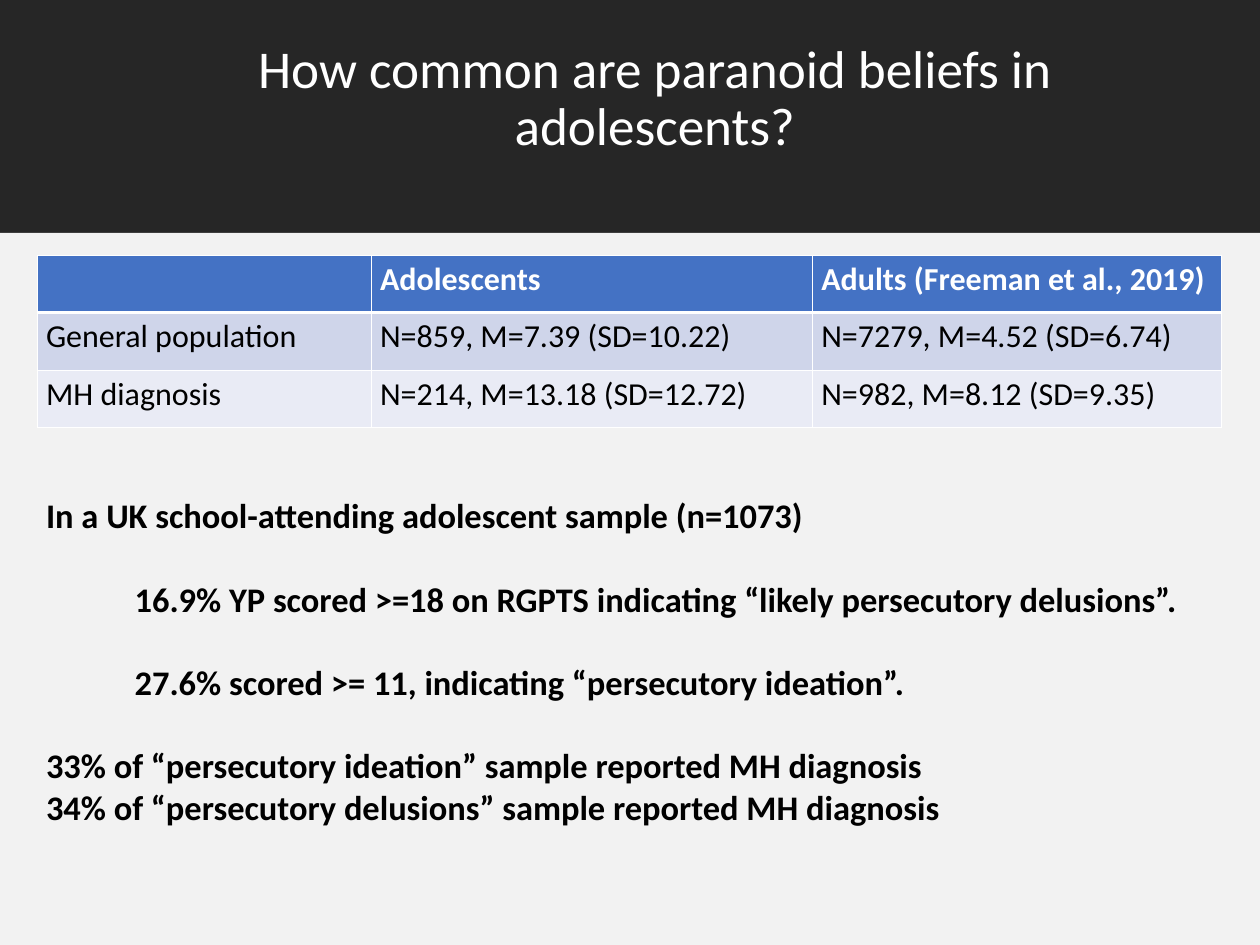
from dataclasses import dataclass

from lxml.etree import SubElement
from pptx import Presentation
from pptx.dml.color import RGBColor
from pptx.enum.shapes import MSO_SHAPE
from pptx.enum.text import MSO_ANCHOR, MSO_AUTO_SIZE, PP_ALIGN
from pptx.oxml.ns import qn
from pptx.util import Inches, Pt

COLOURS = {
    "banner": "262626",
    "panel": "F2F2F2",
    "white": "FFFFFF",
    "black": "000000",
    "header": "4472C4",
    "odd_row": "CFD5EA",
    "even_row": "E9EBF5",
}
FONT = "Calibri"
WIDTH, HEIGHT, BANNER_BOTTOM = 14.22, 10.67, 2.63
LEFT, CONTENT_WIDTH = 0.42, 13.37
LINE_GAP = 34.2


@dataclass
class Band:
    top: float
    height: float
    colour: str


@dataclass
class Finding:
    text: str
    indent: float = 0
    gap: float = LINE_GAP


@dataclass
class TableRow:
    cells: tuple[str, ...]
    fill: str
    colour: str = "black"
    bold: bool = False
    top_border: float = 1
    bottom_border: float = 1


BANDS = [
    Band(0, BANNER_BOTTOM, "banner"),
    Band(BANNER_BOTTOM, HEIGHT - BANNER_BOTTOM, "panel"),
]
FINDINGS = [
    Finding("In a UK school-attending adolescent sample (n=1073)", gap=0),
    Finding("16.9% YP scored >=18 on RGPTS indicating “likely persecutory delusions”.", indent=1),
    Finding("27.6% scored >= 11, indicating “persecutory ideation”.", indent=1),
    Finding("33% of “persecutory ideation” sample reported MH diagnosis"),
    Finding("34% of “persecutory delusions” sample reported MH diagnosis", gap=0),
]
COLUMN_WIDTHS = (3.77, 4.98, 4.62)
ROW_HEIGHT = 0.65
ROWS = [
    TableRow(("", "Adolescents", "Adults (Freeman et al., 2019)"),
             "header", "white", bold=True, bottom_border=3),
    TableRow(("General population", "N=859, M=7.39 (SD=10.22)", "N=7279, M=4.52 (SD=6.74)"),
             "odd_row", top_border=3),
    TableRow(("MH diagnosis", "N=214, M=13.18 (SD=12.72)", "N=982, M=8.12 (SD=9.35)"),
             "even_row"),
]


def colour(name: str) -> RGBColor:
    return RGBColor.from_string(COLOURS[name])


def set_font(paragraph, size: float, colour_name: str, bold: bool = False) -> None:
    font = paragraph.font
    font.name, font.size, font.bold = FONT, Pt(size), bold
    font.color.rgb = colour(colour_name)


def place(shape, left: float, top: float, width: float, height: float) -> None:
    shape.left, shape.top = Inches(left), Inches(top)
    shape.width, shape.height = Inches(width), Inches(height)


def add_band(slide, band: Band) -> None:
    """Draw a full-width band behind the title and body text."""
    shape = slide.shapes.add_shape(
        MSO_SHAPE.RECTANGLE, 0, Inches(band.top), Inches(WIDTH), Inches(band.height))
    shape.shadow.inherit = False
    shape.fill.solid()
    shape.fill.fore_color.rgb = colour(band.colour)
    shape.line.fill.background()
    slide.shapes.title.element.addprevious(shape.element)


def fill_title(title) -> None:
    place(title, 1.62, 0.43, 11.54, 1.4)
    frame = title.text_frame
    frame.text = "How common are paranoid beliefs in adolescents?"
    frame.auto_size = MSO_AUTO_SIZE.NONE
    frame.vertical_anchor = MSO_ANCHOR.MIDDLE
    paragraph = frame.paragraphs[0]
    paragraph.alignment = PP_ALIGN.CENTER
    paragraph.line_spacing = 0.9
    set_font(paragraph, 43.2, "white")


def fill_findings(body) -> None:
    place(body, LEFT, 5.53, CONTENT_WIDTH, 3.87)
    frame = body.text_frame
    frame.auto_size = MSO_AUTO_SIZE.NONE
    frame.vertical_anchor = MSO_ANCHOR.TOP
    frame.text = "\n".join(finding.text for finding in FINDINGS)
    for paragraph, finding in zip(frame.paragraphs, FINDINGS):
        properties = paragraph._p.get_or_add_pPr()
        properties.set("marL", str(Inches(finding.indent)))
        properties.set("indent", "0")
        SubElement(properties, qn("a:buNone"))
        paragraph.space_before = Pt(finding.gap)
        set_font(paragraph, 28, "black", bold=True)


def add_borders(cell, row: TableRow) -> None:
    properties = cell._tc.get_or_add_tcPr()
    widths = {"lnL": 1, "lnR": 1, "lnT": row.top_border, "lnB": row.bottom_border}
    for side, width in widths.items():
        line = SubElement(properties, qn(f"a:{side}"), w=str(Pt(width)))
        fill = SubElement(line, qn("a:solidFill"))
        SubElement(fill, qn("a:srgbClr"), val=COLOURS["white"])


def add_scores_table(slide) -> None:
    table = slide.shapes.add_table(
        len(ROWS), len(COLUMN_WIDTHS), Inches(LEFT), Inches(2.88),
        Inches(CONTENT_WIDTH), Inches(ROW_HEIGHT * len(ROWS))).table
    for column, width in zip(table.columns, COLUMN_WIDTHS):
        column.width = Inches(width)
    for table_row, row in zip(table.rows, ROWS):
        table_row.height = Inches(ROW_HEIGHT)
        for cell, text in zip(table_row.cells, row.cells):
            add_borders(cell, row)
            cell.fill.solid()
            cell.fill.fore_color.rgb = colour(row.fill)
            cell.text = text
            set_font(cell.text_frame.paragraphs[0], 26, row.colour, row.bold)


def main() -> None:
    presentation = Presentation()
    presentation.slide_width, presentation.slide_height = Inches(WIDTH), Inches(HEIGHT)
    slide = presentation.slides.add_slide(presentation.slide_layouts[1])
    for band in BANDS:
        add_band(slide, band)
    fill_title(slide.shapes.title)
    fill_findings(slide.placeholders[1])
    add_scores_table(slide)
    presentation.save("out.pptx")


if __name__ == "__main__":
    main()
